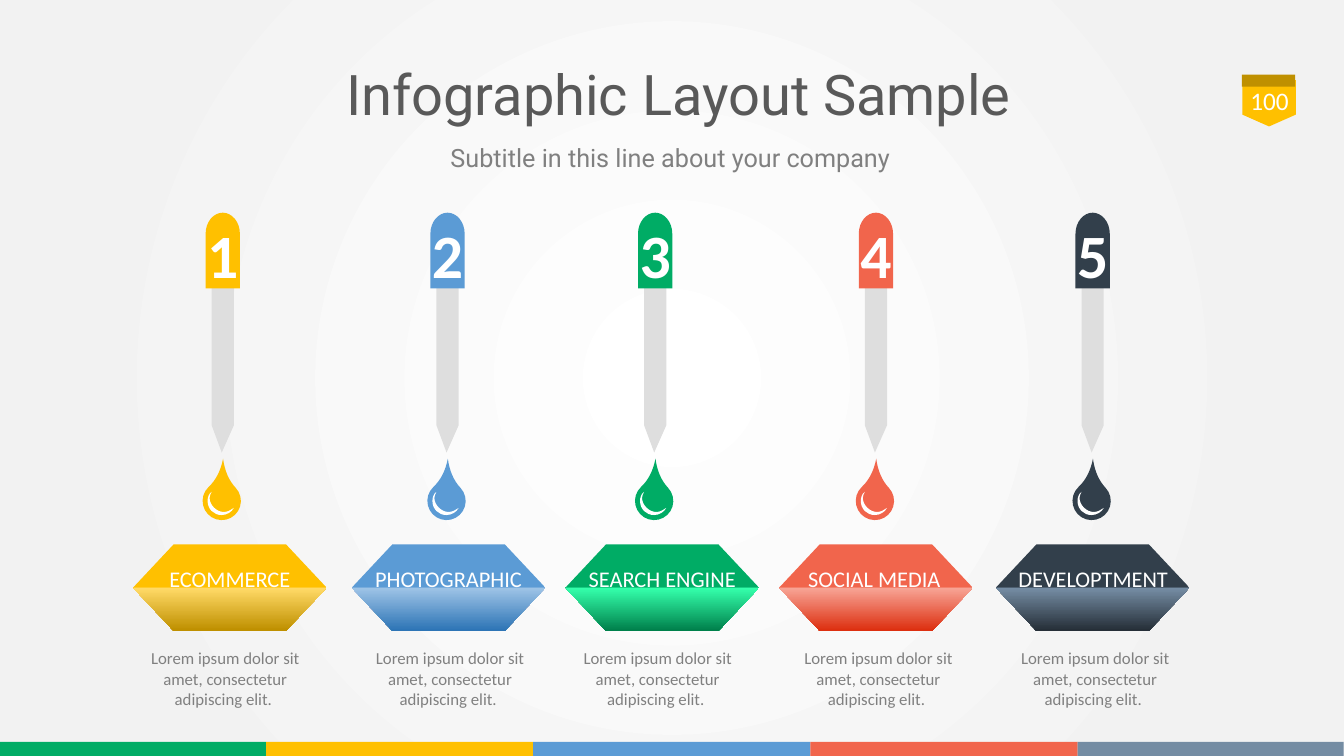
"""Build the dropper infographic slide with five numbered topics."""
from pptx import Presentation
from pptx import util as u
from pptx.dml.color import RGBColor
from pptx.enum import shapes, text
from pptx.oxml import parse_xml
from pptx.oxml.ns import nsdecls

COLORS = {
    "white": "FFFFFF", "paper": "F2F2F2", "title": "595959", "gray": "808080",
    "glass": "DEDEDE", "yellow": "FFC000", "gold": "BF9000", "blue": "5B9BD5",
    "green": "00AC65", "red": "F1654C", "navy": "323F4B", "slate": "748CA3",
    "pale yellow": "FFD966", "pale blue": "9DC3E6", "deep blue": "2E75B6",
    "mint": "34FFAB", "deep green": "00814C", "pink": "F7A394",
    "deep red": "DD3011", "ink": "262F38",
}
TITLE = "Infographic Layout Sample"
SUBTITLE = "Subtitle in this line about your company"
PAGE = "100"
BODY = "Lorem ipsum dolor sit amet, consectetur adipiscing elit. "
TOPICS = [
    ("ECOMMERCE", 2.21, 1.32, 1.57, 1.42, "yellow", "pale yellow", "gold"),
    ("PHOTOGRAPHIC", 4.44, 3.49, 3.61, 1.68, "blue", "pale blue", "deep blue"),
    ("SEARCH ENGINE", 6.5, 5.61, 5.73, 1.68, "green", "mint", "deep green"),
    ("SOCIAL MEDIA", 8.69, 7.73, 7.91, 1.53, "red", "pink", "deep red"),
    ("DEVELOPTMENT", 10.84, 9.88, 9.99, 1.71, "navy", "slate", "ink"),
]
FOOTER = ["green", "yellow", "blue", "red", "slate"]
FOOTER_EDGES = [0, 2.64, 5.29, 8.04, 10.69, 13.33]

GLASS = [(0.11, 2.53), [(0.11, 4.22)], [(-0.01, 4.49)], [(-0.11, 4.22)], [(-0.11, 2.53)]]
CAP = [(0, 2.11), [(0.09, 2.11), (0.17, 2.2), (0.17, 2.32)], [(0.17, 2.86)],
       [(-0.17, 2.86)], [(-0.17, 2.32)], [(-0.17, 2.2), (-0.09, 2.11), (0, 2.11)]]
GLINT = [(-0.11, 4.88), [(-0.12, 4.9), (-0.13, 4.92), (-0.13, 4.94)],
         [(-0.13, 5.01), (-0.06, 5.08), (0.01, 5.08)],
         [(0.05, 5.08), (0.08, 5.06), (0.11, 5.04)],
         [(0.09, 5.08), (0.04, 5.11), (-0.01, 5.11)],
         [(-0.09, 5.11), (-0.15, 5.05), (-0.15, 4.97)],
         [(-0.15, 4.94), (-0.14, 4.9), (-0.11, 4.88)]]


def rgb(name):
    return RGBColor.from_string(COLORS[name])


def finish(sp, color):
    sp.shadow.inherit = False
    sp.line.fill.background()
    if color:
        sp.fill.solid()
        sp.fill.fore_color.rgb = rgb(color)
    return sp


def add_preset(parent, kind, x, y, w, h, color=None, adjust=None, turn=0):
    sp = parent.shapes.add_shape(kind, *map(u.Inches, (x, y, w, h)))
    if adjust is not None:
        sp.adjustments[0] = adjust
    sp.rotation = turn
    return finish(sp, color)


def add_outline(parent, outline, center, color):
    start, *segments = outline
    points = [(u.Inches(center + x), u.Inches(y))
              for x, y in [start, *(point for segment in segments for point in segment)]]
    builder = parent.shapes.build_freeform(*points[0])
    builder.add_line_segments(points[1:], close=True)
    sp = builder.convert_to_shape()
    lines = iter(sp.element.xpath(".//a:lnTo"))
    for segment in segments:
        group = [next(lines) for _ in segment]
        if len(group) == 3:
            curve = parse_xml(f'<a:cubicBezTo {nsdecls("a")}/>')
            group[0].addprevious(curve)
            for line in group:
                curve.append(line[0])
                line.getparent().remove(line)
    return finish(sp, color)


def add_text(parent, words, x, y, w, h, size, color, face="Calibri", bold=False,
             spacing=None, middle=False, grow=True, wrap=True):
    tf = parent.shapes.add_textbox(*map(u.Inches, (x, y, w, h))).text_frame
    tf.word_wrap = wrap
    tf.auto_size = text.MSO_AUTO_SIZE.SHAPE_TO_FIT_TEXT if grow else text.MSO_AUTO_SIZE.NONE
    tf.vertical_anchor = text.MSO_ANCHOR.MIDDLE if middle else text.MSO_ANCHOR.TOP
    p = tf.paragraphs[0]
    p.text = words
    p.alignment = text.PP_ALIGN.CENTER
    p.line_spacing = spacing
    p.font.size, p.font.name, p.font.bold = u.Pt(size), face, bold
    p.font.color.rgb = rgb(color)


def set_gradient(fill, holder, stops, direction):
    fill.gradient()
    grad = holder.xpath(".//a:gradFill")[0]
    for child in list(grad):
        grad.remove(child)
    marks = "".join(f'<a:gs pos="{pos * 1000}"><a:srgbClr val="{COLORS[c]}"/></a:gs>'
                    for pos, c in stops)
    root = parse_xml(f'<a:gradFill {nsdecls("a")}><a:gsLst>{marks}</a:gsLst>{direction}</a:gradFill>')
    for child in list(root):
        grad.append(child)


def add_dropper(slide, number, x, color):
    drop = slide.shapes.add_group_shape()
    add_preset(drop, shapes.MSO_SHAPE.TEAR, x - 0.2, 4.78, 0.38, 0.38, color, 1.561, 316.8)
    add_outline(drop, GLINT, x, "white")
    pipette = slide.shapes.add_group_shape()
    add_outline(pipette, GLASS, x, "glass")
    add_outline(pipette, CAP, x, color)
    add_text(pipette, str(number), x - 0.34, 2.24, 0.68, 0.69, 44, "white",
             bold=True, spacing=0.8)


def add_label(slide, label, hex_x, label_x, label_w, color, light, dark):
    badge = slide.shapes.add_group_shape()
    sp = add_preset(badge, shapes.MSO_SHAPE.HEXAGON, hex_x, 5.4, 1.92, 0.86, adjust=0.469)
    set_gradient(sp.fill, sp.element, [(0, color), (49, color), (51, light), (99, dark)],
                 '<a:lin ang="5400000" scaled="0"/>')
    add_text(badge, label, label_x, 5.56, label_w, 0.37, 16, "white", wrap=False)


def main():
    prs = Presentation()
    prs.slide_width, prs.slide_height = u.Emu(12192000), u.Inches(7.5)
    slide = prs.slides.add_slide(prs.slide_layouts[6])
    set_gradient(slide.background.fill, slide.element,
                 [(0, "white"), (81, "paper"), (100, "paper")],
                 '<a:path path="circle"><a:fillToRect l="50000" t="50000" r="50000" b="50000"/></a:path>')
    ribbon = slide.shapes.add_group_shape()
    add_preset(ribbon, shapes.MSO_SHAPE.PENTAGON, 12.36, 0.76, 0.46, 0.53, "yellow", 0.255, 90)
    add_preset(ribbon, shapes.MSO_SHAPE.RECTANGLE, 12.32, 0.74, 0.53, 0.12, "gold")
    footer = slide.shapes.add_group_shape()
    for color, left, right in zip(FOOTER, FOOTER_EDGES, FOOTER_EDGES[1:]):
        add_preset(footer, shapes.MSO_SHAPE.RECTANGLE, left, 7.36, right - left, 0.14, color)
    add_text(slide, TITLE, 0.88, 0.57, 11.7, 0.8, 40, "title", "Roboto",
             spacing=0.9, middle=True, grow=False)
    add_text(slide, PAGE, 12.29, 0.74, 0.61, 0.52, 18, "white", middle=True, grow=False)
    for number, (_, x, _, _, _, color, _, _) in enumerate(TOPICS, 1):
        add_dropper(slide, number, x, color)
    for _, x, *_ in TOPICS:
        add_text(slide, BODY, x - 0.97, 6.38, 1.99, 0.71, 12, "gray")
    for label, _, *rest in reversed(TOPICS):
        add_label(slide, label, *rest)
    add_text(slide, SUBTITLE, 3.76, 1.36, 5.78, 0.4, 18, "gray", "Roboto")
    prs.save("out.pptx")


if __name__ == "__main__":
    main()
